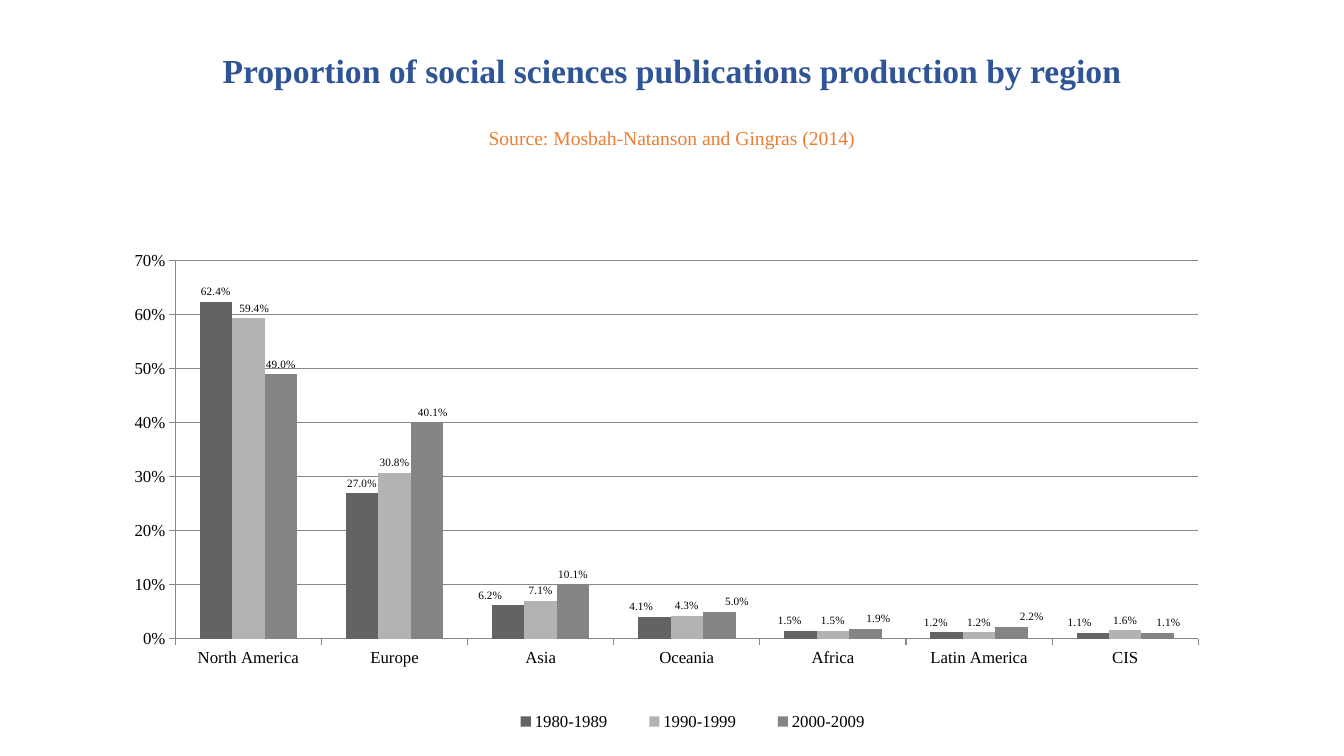
import pptx
import pptx.chart.data
import pptx.dml.color
import pptx.enum.chart
import pptx.enum.text
import pptx.oxml
import pptx.oxml.ns
import pptx.util

PX = 9525
FACE = "Times New Roman"
COLORS = {
    "title": "2F5597",
    "source": "ED7D31",
    "text": "000000",
    "line": "878787",
    "1980-1989": "636363",
    "1990-1999": "B3B3B3",
    "2000-2009": "848484",
}
REGIONS = ["North America", "Europe", "Asia", "Oceania", "Africa",
           "Latin America", "CIS"]
SHARES = {
    "1980-1989": [0.624, 0.27, 0.062, 0.041, 0.015, 0.012, 0.011],
    "1990-1999": [0.594, 0.308, 0.071, 0.043, 0.015, 0.012, 0.016],
    "2000-2009": [0.49, 0.401, 0.101, 0.05, 0.019, 0.022, 0.011],
}
# Sideways shift of single labels in px, by period and region index
SHIFTS = {
    "1980-1989": {2: -17, 3: -12, 4: -10, 5: -10, 6: -13},
    "1990-1999": {0: 6},
    "2000-2009": {1: 6, 3: 17, 4: 13, 5: 19, 6: 10},
}
CHART_BOX = (65, 203, 1133, 507)


def color(name):
    return pptx.dml.color.RGBColor.from_string(COLORS[name])


def scale(*sizes):
    return [size * PX for size in sizes]


def set_font(font, size, name="text", bold=False):
    font.name = FACE
    font.size = pptx.util.Pt(size)
    font.bold = bold
    font.color.rgb = color(name)


def make_layout(sizes, inner=False):
    """Return a c:layout element; sizes maps x, y, w, h to chart shares."""
    target = '<c:layoutTarget val="inner"/>' if inner else ""
    modes = "".join(f'<c:{key}Mode val="edge"/>' for key in "xy" if "w" in sizes)
    parts = "".join(f'<c:{key} val="{val}"/>' for key, val in sizes.items())
    return pptx.oxml.parse_xml(
        f'<c:layout {pptx.oxml.ns.nsdecls("c")}><c:manualLayout>'
        f"{target}{modes}{parts}</c:manualLayout></c:layout>")


def place(element, layout, after=None):
    """Swap in the layout of a chart part, as first child or after one."""
    for old in element.findall(pptx.oxml.ns.qn("c:layout")):
        element.remove(old)
    if after is None:
        element.insert(0, layout)
    else:
        element.find(pptx.oxml.ns.qn(after)).addnext(layout)


def add_title(slide):
    box = slide.shapes.add_textbox(*scale(88, 38, 1104, 139))
    frame = box.text_frame
    frame.word_wrap = True
    frame.margin_top = 14 * PX
    frame.text = ("Proportion of social sciences publications production by region\n"
                  "Source: Mosbah-Natanson and Gingras (2014)")
    head, source = frame.paragraphs
    for para in (head, source):
        para.alignment = pptx.enum.text.PP_ALIGN.CENTER
        para.line_spacing = 0.9
    source.space_before = pptx.util.Pt(27)
    set_font(head.runs[0].font, 24, "title", True)
    set_font(source.runs[0].font, 14, "source")


def style_axis(axis):
    set_font(axis.tick_labels.font, 12)
    axis.major_tick_mark = pptx.enum.chart.XL_TICK_MARK.OUTSIDE
    axis.format.line.color.rgb = color("line")
    axis.format.line.width = pptx.util.Pt(0.75)


def style_values(axis):
    style_axis(axis)
    axis.minimum_scale = 0
    axis.maximum_scale = 0.7
    axis.major_unit = 0.1
    axis.tick_labels.number_format = "0%"
    axis.tick_labels.number_format_is_linked = False
    grid = axis.major_gridlines.format.line
    grid.color.rgb = color("line")
    grid.width = pptx.util.Pt(0.75)


def style_series(series):
    series.format.fill.solid()
    series.format.fill.fore_color.rgb = color(series.name)
    above = pptx.enum.chart.XL_LABEL_POSITION.OUTSIDE_END
    labels = series.data_labels
    labels.show_value = True
    labels.number_format = "0.0%"
    labels.number_format_is_linked = False
    labels.position = above
    set_font(labels.font, 8)
    for index, shift in SHIFTS[series.name].items():
        label = series.points[index].data_label
        label.position = above
        set_font(label.font, 8)
        node = series._element.xpath(f'.//c:dLbl[c:idx/@val="{index}"]')[0]
        offset = round(shift / CHART_BOX[2], 3)
        place(node, make_layout({"x": offset, "y": 0}), "c:idx")


def add_bars(slide):
    data = pptx.chart.data.CategoryChartData(number_format="0.0%")
    data.categories = REGIONS
    for period, shares in SHARES.items():
        data.add_series(period, shares)
    kind = pptx.enum.chart.XL_CHART_TYPE.COLUMN_CLUSTERED
    chart = slide.shapes.add_chart(kind, *scale(*CHART_BOX), data).chart
    chart.has_title = False
    set_font(chart.font, 10)
    plot = chart.plots[0]
    plot.gap_width = 150
    plot.overlap = 0
    plot.vary_by_categories = False
    for series in plot.series:
        style_series(series)
    style_axis(chart.category_axis)
    style_values(chart.value_axis)
    area = chart._chartSpace.xpath("c:chart/c:plotArea")[0]
    place(area, make_layout({"x": 0.09, "y": 0.09, "w": 0.86, "h": 0.71}, True))
    add_legend(chart)


def add_legend(chart):
    chart.has_legend = True
    legend = chart.legend
    legend.position = pptx.enum.chart.XL_LEGEND_POSITION.BOTTOM
    legend.include_in_layout = False
    set_font(legend.font, 12)
    place(legend._element,
          make_layout({"x": 0.35, "y": 0.93, "w": 0.35, "h": 0.05}),
          "c:legendPos")


def main():
    deck = pptx.Presentation()
    deck.slide_width, deck.slide_height = scale(1280, 720)
    slide = deck.slides.add_slide(deck.slide_layouts[6])
    add_title(slide)
    add_bars(slide)
    deck.save("out.pptx")


if __name__ == "__main__":
    main()
